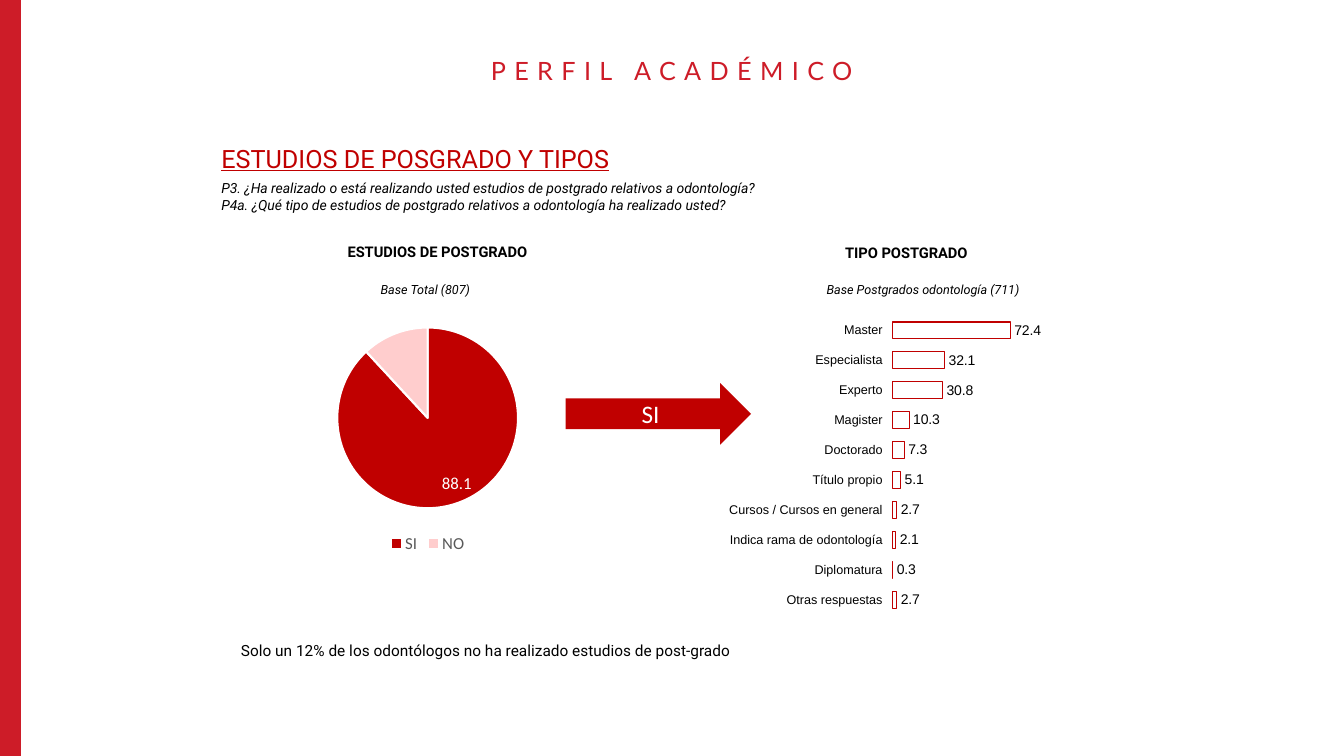
from copy import deepcopy

from lxml.etree import SubElement
from pptx import Presentation
from pptx.chart.data import CategoryChartData
from pptx.dml.color import RGBColor
from pptx.enum.chart import XL_CHART_TYPE, XL_LABEL_POSITION, XL_LEGEND_POSITION, XL_TICK_LABEL_POSITION, XL_TICK_MARK
from pptx.enum.shapes import MSO_SHAPE
from pptx.enum.text import MSO_ANCHOR, PP_ALIGN
from pptx.oxml.ns import qn
from pptx.util import Pt

COLORS = {
    "band": "CD1C28",
    "red": "C00000",
    "pink": "FFCDCD",
    "white": "FFFFFF",
    "black": "000000",
    "legend": "595959",
    "label": "404040",
}

POSTGRADUATE = {"SI": 88.1, "NO": 11.9}
POSTGRADUATE_TYPES = {
    "Master": 72.4,
    "Especialista": 32.1,
    "Experto": 30.8,
    "Magister": 10.3,
    "Doctorado": 7.3,
    "Título propio": 5.1,
    "Cursos / Cursos en general": 2.7,
    "Indica rama de odontología": 2.1,
    "Diplomatura": 0.3,
    "Otras respuestas": 2.7,
}


def color(name):
    return RGBColor.from_string(COLORS[name])


def style_font(font, size, name, fill="black", bold=False, italic=False, underline=False):
    font.size, font.name = Pt(size), name
    font.bold, font.italic, font.underline = bold, italic, underline
    font.color.rgb = color(fill)


def write_text(shape, text, align=PP_ALIGN.LEFT, anchor=MSO_ANCHOR.TOP,
               line_spacing=None, tracking=None, **font_format):
    frame = shape.text_frame
    frame.word_wrap = True
    frame.vertical_anchor = anchor
    paragraph = frame.paragraphs[0]
    paragraph.text = text
    paragraph.alignment = align
    paragraph.line_spacing = line_spacing
    for run in paragraph.runs:
        style_font(run.font, **font_format)
        if tracking:
            run.font._element.set("spc", str(tracking * 100))
    # Line breaks take the height of the text around them
    for line_break in paragraph._p.findall(qn("a:br")):
        line_break.append(deepcopy(paragraph.runs[0].font._element))


def add_text(slide, box, text, name="Roboto", **text_format):
    shape = slide.shapes.add_textbox(*map(Pt, box))
    write_text(shape, text, name=name, **text_format)


def add_block(slide, preset, box, fill):
    shape = slide.shapes.add_shape(preset, *map(Pt, box))
    shape.shadow.inherit = False
    shape.fill.solid()
    shape.fill.fore_color.rgb = color(fill)
    shape.line.fill.background()
    return shape


def add_chart(slide, kind, box, values, size, font_name):
    data = CategoryChartData()
    data.categories = list(values)
    data.add_series("Series 1", list(values.values()))
    chart = slide.shapes.add_chart(kind, *map(Pt, box), data).chart
    chart.has_title = False
    chart.has_legend = False
    style_font(chart.font, size, font_name)
    return chart


def show_values(plot, position, size, font_name, fill):
    plot.has_data_labels = True
    labels = plot.data_labels
    labels.show_value = True
    labels.position = position
    labels.number_format = "#,##0.0"
    labels.number_format_is_linked = False
    style_font(labels.font, size, font_name, fill)


def place_plot(chart, x, y, width, height):
    plot_area = chart._chartSpace.chart.plotArea
    for old_layout in plot_area.findall(qn("c:layout")):
        plot_area.remove(old_layout)
    layout = plot_area.makeelement(qn("c:layout"))
    plot_area.insert(0, layout)
    manual = SubElement(layout, qn("c:manualLayout"))
    settings = {"layoutTarget": "inner", "xMode": "edge", "yMode": "edge",
                "x": x, "y": y, "w": width, "h": height}
    for tag, value in settings.items():
        SubElement(manual, qn(f"c:{tag}")).set("val", str(value))


def add_pie(slide, box, values):
    chart = add_chart(slide, XL_CHART_TYPE.PIE, box, values, 10, "Calibri")
    plot = chart.plots[0]
    plot.vary_by_categories = True
    show_values(plot, XL_LABEL_POSITION.BEST_FIT, 12, "Calibri", "label")
    points = plot.series[0].points
    for index, fill in enumerate(["red", "pink"]):
        slice_format = points[index].format
        slice_format.fill.solid()
        slice_format.fill.fore_color.rgb = color(fill)
        slice_format.line.color.rgb = color("white")
        slice_format.line.width = Pt(1.5)
    # White value on the dark slice
    dark_label = points[0].data_label
    style_font(dark_label.font, 12, "Calibri", "white")
    dark_label.position = XL_LABEL_POSITION.BEST_FIT
    chart.has_legend = True
    chart.legend.position = XL_LEGEND_POSITION.BOTTOM
    chart.legend.include_in_layout = False
    style_font(chart.legend.font, 12, "Calibri", "legend")


def add_bars(slide, box, values):
    chart = add_chart(slide, XL_CHART_TYPE.BAR_CLUSTERED, box, values, 10.5, "Arial")
    place_plot(chart, 0.49, 0.04, 0.46, 0.92)
    plot = chart.plots[0]
    plot.gap_width = 80
    plot.vary_by_categories = False
    show_values(plot, XL_LABEL_POSITION.OUTSIDE_END, 10, "Arial", "black")
    bars = plot.series[0].format
    bars.fill.solid()
    bars.fill.fore_color.rgb = color("white")
    bars.line.color.rgb = color("red")
    bars.line.width = Pt(0.75)
    # Axes
    categories = chart.category_axis
    categories.reverse_order = True
    categories.major_tick_mark = XL_TICK_MARK.OUTSIDE
    categories.tick_label_position = XL_TICK_LABEL_POSITION.LOW
    categories.format.line.fill.background()
    style_font(categories.tick_labels.font, 9, "Arial")
    scale = chart.value_axis
    scale.minimum_scale, scale.maximum_scale, scale.major_unit = 0, 110, 10
    scale.has_major_gridlines = False
    scale.visible = False


def main():
    presentation = Presentation()
    presentation.slide_width, presentation.slide_height = Pt(960), Pt(540)
    slide = presentation.slides.add_slide(presentation.slide_layouts[6])

    # Side band and headings
    add_block(slide, MSO_SHAPE.RECTANGLE, (0, 0, 15, 540), "band")
    add_text(slide, (327.6, 38.2, 304.6, 26.6), "PERFIL ACADÉMICO", name="Lato", size=18,
             fill="band", align=PP_ALIGN.CENTER, anchor=MSO_ANCHOR.MIDDLE,
             line_spacing=0.9, tracking=6)
    add_text(slide, (151, 98.6, 608, 29), "ESTUDIOS DE POSGRADO Y TIPOS",
             size=18, fill="red", underline=True)
    add_text(slide, (151, 124.6, 668, 31.7),
             "P3. ¿Ha realizado o está realizando usted estudios de postgrado relativos a odontología?\n"
             "P4a. ¿Qué tipo de estudios de postgrado relativos a odontología ha realizado usted?",
             size=10, italic=True)

    # Chart titles and sample bases
    for box, title in [((231, 170, 163, 20), "ESTUDIOS DE POSTGRADO"),
                       ((573, 170.6, 149, 20), "TIPO POSTGRADO")]:
        add_text(slide, box, title, size=10.5, bold=True, align=PP_ALIGN.CENTER)
    for box, base in [((239, 198, 129.6, 18), "Base Total (807)"),
                      ((571, 198, 176.4, 18), "Base Postgrados odontología (711)")]:
        add_text(slide, box, base, size=9, italic=True, align=PP_ALIGN.CENTER)

    # Charts and the arrow between them
    add_bars(slide, (501, 216, 278.6, 232.6), POSTGRADUATE_TYPES)
    add_pie(slide, (177, 224, 257, 174.2), POSTGRADUATE)
    arrow = add_block(slide, MSO_SHAPE.RIGHT_ARROW, (404, 273.6, 132.5, 44), "red")
    write_text(arrow, "SI", name="Calibri", size=18, fill="white",
               align=PP_ALIGN.CENTER, anchor=MSO_ANCHOR.MIDDLE)

    # Conclusion
    add_text(slide, (165, 454.3, 622.8, 20.9),
             "Solo un 12% de los odontólogos no ha realizado estudios de post-grado",
             size=11, align=PP_ALIGN.JUSTIFY)

    presentation.save("out.pptx")


if __name__ == "__main__":
    main()
